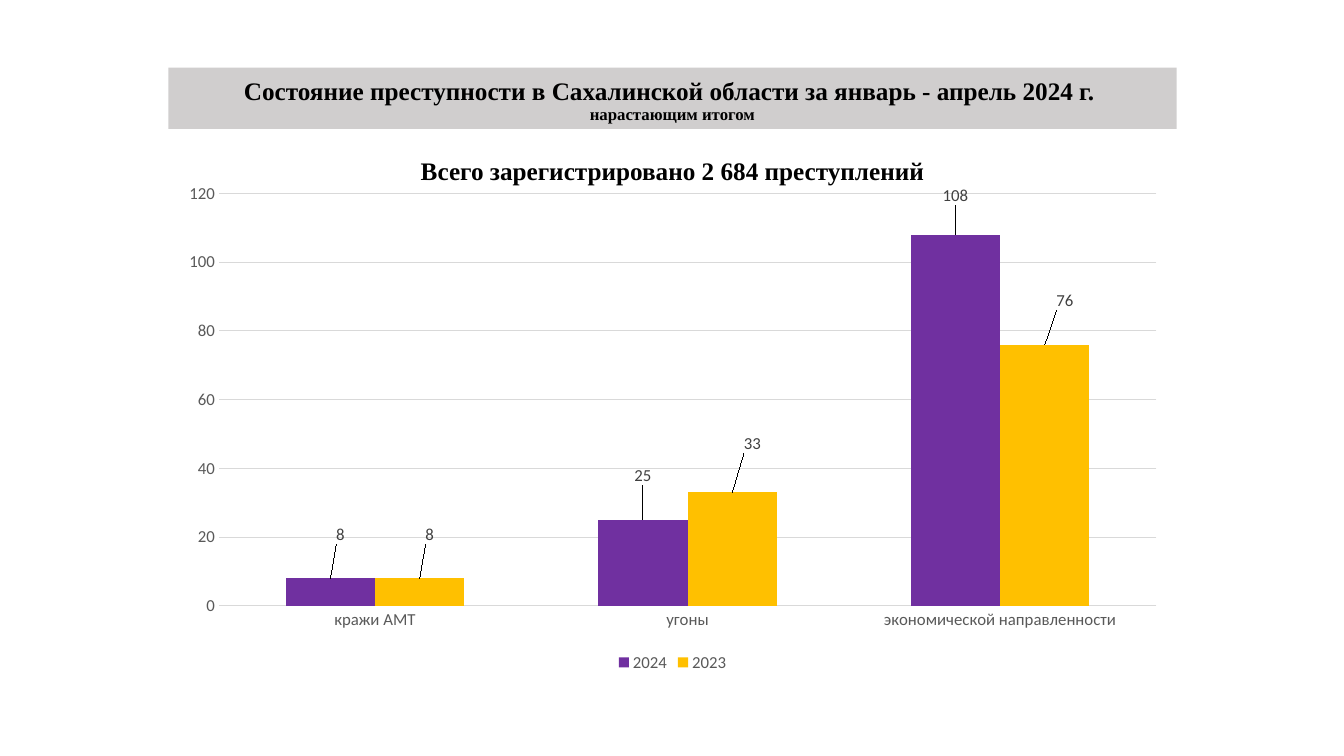
from lxml import etree
from pptx import Presentation
from pptx import util as u
from pptx.chart.data import CategoryChartData
from pptx.dml.color import RGBColor
from pptx.enum import chart as charts, shapes, text
from pptx.oxml import ns

COLORS = {
    "band": "D0CECE", "black": "000000", "axis": "595959", "label": "404040",
    "grid": "D9D9D9", "2024": "7030A0", "2023": "FFC000",
}
CATEGORIES = ["кражи АМТ", "угоны", "экономической направленности"]
SERIES = {"2024": [8, 25, 108], "2023": [8, 33, 76]}
LABEL_OFFSETS = {
    "2024": [(0.01, -0.06), (0, -0.06), (0, -0.05)],
    "2023": [(0.01, -0.06), (0.02, -0.07), (0.02, -0.06)],
}
LEFT, WIDTH = 1.67, 10


def color(name):
    return RGBColor.from_string(COLORS[name])


def format_font(font, name="Calibri", size=12, ink="axis", bold=False):
    font.name = name
    font.size = u.Pt(size)
    font.color.rgb = color(ink)
    font.bold = bold


def write(para, content, **style):
    span = para.add_run()
    span.text = content
    format_font(span.font, **style)


def set_layout(parent, index, **values):
    layout = etree.Element(ns.qn("c:layout"))
    manual = etree.SubElement(layout, ns.qn("c:manualLayout"))
    for key, value in values.items():
        etree.SubElement(manual, ns.qn(f"c:{key}"), val=str(value))
    for previous in parent.findall(ns.qn("c:layout")):
        parent.remove(previous)
    parent.insert(index, layout)


class CrimeSlide:
    def __init__(self, deck):
        self.page = deck.slides.add_slide(deck.slide_layouts[6])
        self.heading = {"name": "Times New Roman", "ink": "black", "bold": True}

    def add_text(self, top, height, lines, spacing, anchor, fill=None):
        box = self.page.shapes.add_shape(
            shapes.MSO_SHAPE.RECTANGLE, u.Inches(LEFT), u.Inches(top),
            u.Inches(WIDTH), u.Inches(height))
        box.shadow.inherit = False
        box.line.fill.background()
        if fill:
            box.fill.solid()
            box.fill.fore_color.rgb = color(fill)
        else:
            box.fill.background()
        frame = box.text_frame
        frame.word_wrap = True
        frame.vertical_anchor = anchor
        para = frame.paragraphs[0]
        para.alignment = text.PP_ALIGN.CENTER
        para.line_spacing = spacing
        for number, (content, size) in enumerate(lines):
            if number:
                para.add_line_break()
            write(para, content, size=size, **self.heading)

    def add_chart(self, top, height):
        data = CategoryChartData()
        data.categories = CATEGORIES
        for name, values in SERIES.items():
            data.add_series(name, values)
        chart = self.page.shapes.add_chart(
            charts.XL_CHART_TYPE.COLUMN_CLUSTERED, u.Inches(LEFT), u.Inches(top),
            u.Inches(WIDTH), u.Inches(height), data).chart
        chart.has_title = False
        format_font(chart.font, size=10, ink="black")
        chart.has_legend = True
        chart.legend.position = charts.XL_LEGEND_POSITION.BOTTOM
        chart.legend.include_in_layout = False
        format_font(chart.legend.font)
        self.style_axes(chart)
        plot = chart.plots[0]
        plot.gap_width = 150
        plot.overlap = 0
        plot.vary_by_categories = False
        for series in plot.series:
            self.style_series(series)
        plot_area = chart._chartSpace.chart.plotArea
        set_layout(plot_area, 0, layoutTarget="inner", xMode="edge",
                   yMode="edge", x=0.05, y=0.04, w=0.93, h=0.82)

    def style_axes(self, chart):
        for axis in (chart.category_axis, chart.value_axis):
            axis.major_tick_mark = charts.XL_TICK_MARK.NONE
            axis.minor_tick_mark = charts.XL_TICK_MARK.NONE
            axis.format.line.fill.background()
            format_font(axis.tick_labels.font)
        axis = chart.value_axis
        axis.minimum_scale, axis.maximum_scale, axis.major_unit = 0, 120, 20
        axis.has_major_gridlines = True
        axis.major_gridlines.format.line.color.rgb = color("grid")
        axis.major_gridlines.format.line.width = u.Pt(0.75)

    def style_series(self, series):
        series.format.fill.solid()
        series.format.fill.fore_color.rgb = color(series.name)
        labels = series.data_labels
        labels.show_value = True
        labels.position = charts.XL_LABEL_POSITION.OUTSIDE_END
        format_font(labels.font, ink="label")
        for number, (x, y) in enumerate(LABEL_OFFSETS[series.name]):
            label = series.points[number].data_label
            label.position = charts.XL_LABEL_POSITION.OUTSIDE_END
            format_font(label.font, ink="label")
            node = series._element.findall(".//" + ns.qn("c:dLbl"))[number]
            set_layout(node, 1, x=x, y=y)


def main():
    deck = Presentation()
    deck.slide_width, deck.slide_height = u.Inches(13.33), u.Inches(7.5)
    slide = CrimeSlide(deck)
    slide.add_text(0.67, 0.61, [
        ("Состояние преступности в Сахалинской области за январь - апрель 2024 г. ", 18),
        ("нарастающим итогом", 12),
    ], 0.9, text.MSO_ANCHOR.BOTTOM, fill="band")
    slide.add_text(1.55, 0.36, [("Всего зарегистрировано 2 684 преступлений", 18)],
                   0.8, text.MSO_ANCHOR.TOP)
    slide.add_chart(1.72, 4.99)
    deck.save("out.pptx")


if __name__ == "__main__":
    main()
